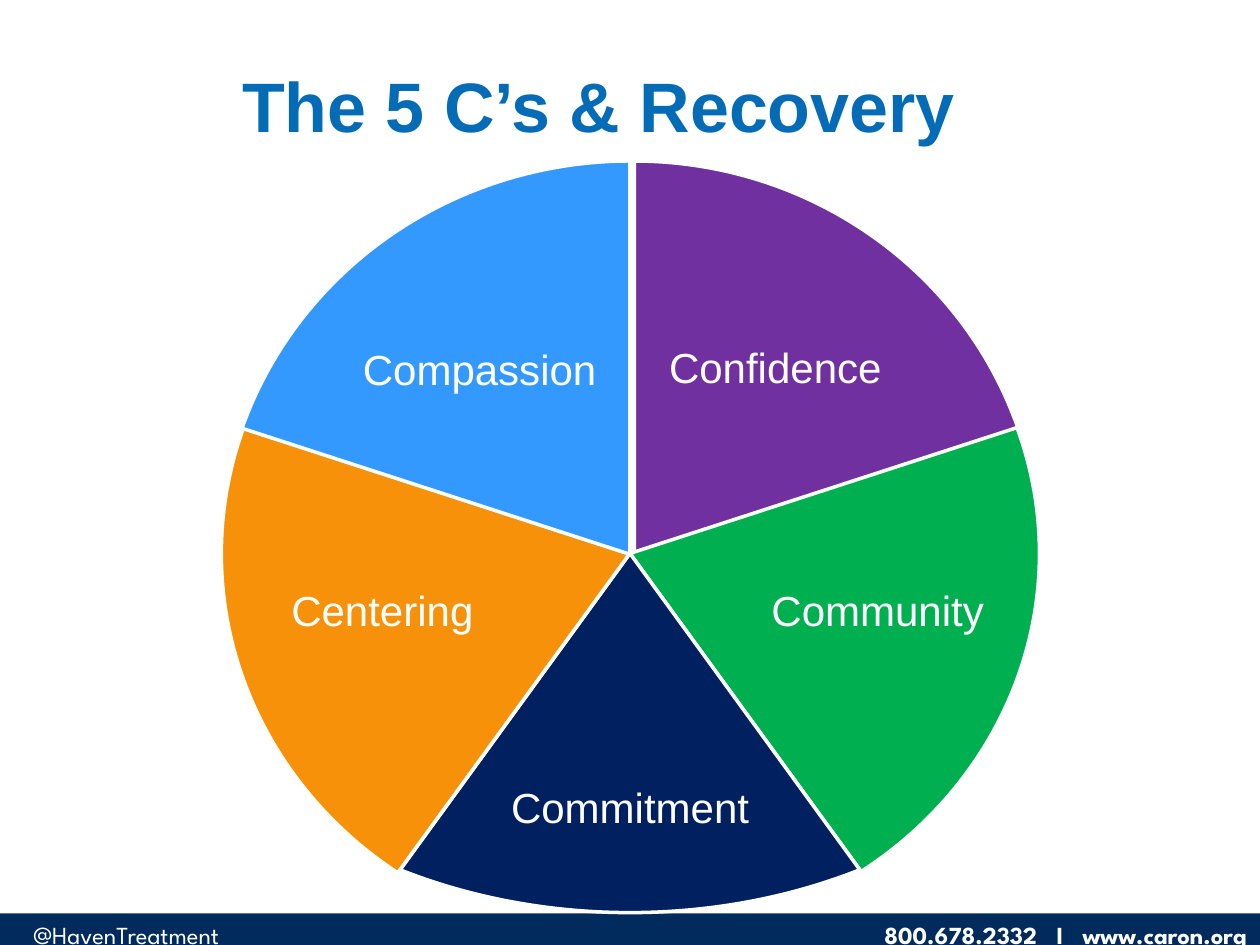
from pptx import Presentation
from pptx.dml.color import RGBColor
from pptx.enum.shapes import MSO_SHAPE as Shape
from pptx.enum.text import MSO_ANCHOR as Anchor, PP_ALIGN as Align
from pptx.util import Pt

COLORS = {
    "white": "FFFFFF", "title": "046CB6", "bar": "002B5C",
    "purple": "7030A0", "green": "00B050", "navy": "002060",
    "orange": "F79109", "blue": "3399FF",
}
BODY = "Arial"
BRAND = "League Spartan"
START = 270  # degrees clockwise from three o'clock

# label, colour, ellipse box, label box; clockwise from the top
WEDGES = [
    ("Confidence", "purple", (131, 92, 463, 449.5), (364.5, 159, 157, 104.5)),
    ("Community", "green", (126, 96, 468, 440.5), (432, 295, 139, 111)),
    ("Commitment", "navy", (82.5, 111, 555, 410.5), (261, 419, 198, 88)),
    ("Centering", "orange", (126.5, 95, 466.5, 443), (149, 295, 139, 111)),
    ("Compassion", "blue", (126, 92, 468, 449.5), (194.5, 160.5, 159, 104.5)),
]


def color(name):
    return RGBColor.from_string(COLORS[name])


def points(box):
    return [Pt(value) for value in box]


def write(shape, text, size, font, tint="white", bold=False,
          align=Align.CENTER, anchor=Anchor.MIDDLE):
    frame = shape.text_frame
    frame.text = text
    frame.word_wrap = True
    frame.vertical_anchor = anchor
    para = frame.paragraphs[0]
    para.alignment = align
    style = para.runs[0].font
    style.size, style.name, style.bold = Pt(size), font, bold
    style.color.rgb = color(tint)
    return frame


def add_solid(slide, kind, box, fill):
    shape = slide.shapes.add_shape(kind, *points(box))
    shape.shadow.inherit = False
    shape.fill.solid()
    shape.fill.fore_color.rgb = color(fill)
    shape.line.fill.background()
    return shape


def add_footer(slide):
    bar = add_solid(slide, Shape.RECTANGLE, (0, 522, 720, 24.5), "bar")
    write(bar, "800.678.2332   I   www.caron.org", 14, BRAND, bold=True,
          align=Align.RIGHT, anchor=Anchor.TOP)
    handle = slide.shapes.add_textbox(*points((12, 522, 180, 24.5)))
    write(handle, "@HavenTreatment", 14, BRAND,
          align=Align.LEFT, anchor=Anchor.TOP)


def add_title(slide, text):
    title = slide.shapes.title
    title.left, title.top, title.width, title.height = points((36, 15, 612, 90))
    write(title, text, 40, BODY, "title", bold=True)


def add_wedge(slide, fill, box, start, sweep):
    pie = add_solid(slide, Shape.PIE, box, fill)
    # angles are stored in 1/60000 degree, adjustments in 1/100000
    for i, angle in enumerate((start, start + sweep)):
        pie.adjustments[i] = angle % 360 * 0.6
    pie.line.color.rgb = color("white")
    pie.line.width = Pt(2)


def add_label(slide, text, box):
    label = slide.shapes.add_textbox(*points(box))
    frame = write(label, text, 24, BODY)
    frame.margin_left = frame.margin_right = Pt(2.4)
    frame.margin_top = frame.margin_bottom = Pt(2.4)
    frame.paragraphs[0].line_spacing = 0.9


def main():
    deck = Presentation()
    deck.slide_width, deck.slide_height = Pt(720), Pt(540)
    slide = deck.slides.add_slide(deck.slide_layouts[5])
    add_footer(slide)
    add_title(slide, "The 5 C’s & Recovery")
    sweep = 360 / len(WEDGES)
    for i, (text, fill, box, spot) in enumerate(WEDGES):
        add_wedge(slide, fill, box, START + i * sweep, sweep)
        add_label(slide, text, spot)
    deck.save("out.pptx")


if __name__ == "__main__":
    main()
